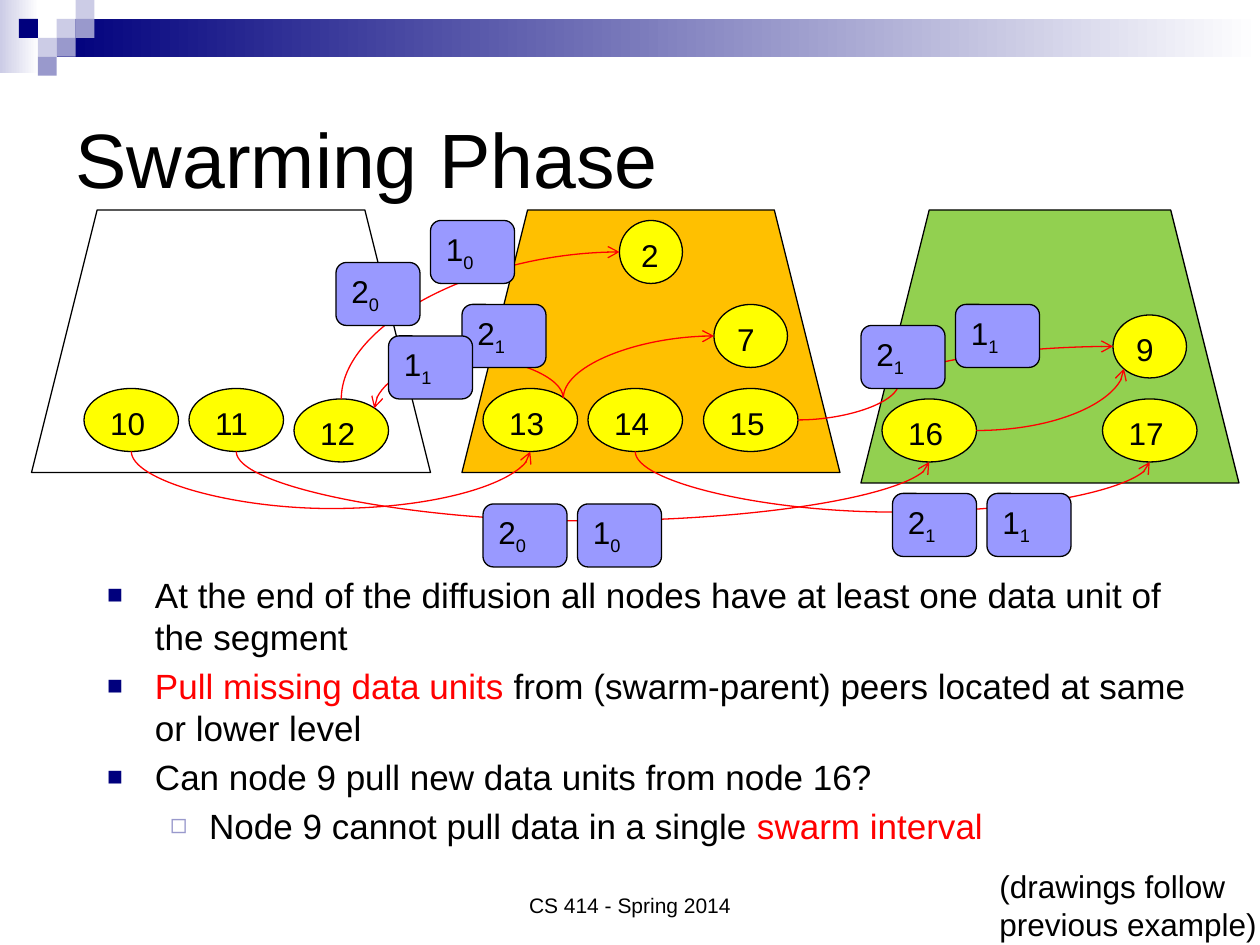
from lxml.etree import SubElement
from pptx import Presentation
from pptx.dml.color import RGBColor
from pptx.enum.shapes import MSO_CONNECTOR, MSO_SHAPE
from pptx.enum.text import MSO_ANCHOR, MSO_AUTO_SIZE, PP_ALIGN
from pptx.oxml.ns import qn
from pptx.util import Inches, Pt

BLACK = RGBColor(0x00, 0x00, 0x00)
WHITE = RGBColor(0xFF, 0xFF, 0xFF)
RED = RGBColor(0xFF, 0x00, 0x00)
YELLOW = RGBColor(0xFF, 0xFF, 0x00)
ORANGE = RGBColor(0xFF, 0xC0, 0x00)
GREEN = RGBColor(0x92, 0xD0, 0x50)
BLOCK = RGBColor(0x99, 0x99, 0xFF)
NAVY = RGBColor(0x00, 0x00, 0x7D)
LILAC = RGBColor(0x99, 0x99, 0xCC)
PALE = RGBColor(0xCC, 0xCC, 0xE6)

prs = Presentation()
prs.slide_width, prs.slide_height = Inches(10), Inches(7.5)
s = prs.slides.add_slide(prs.slide_layouts[1])
U = prs.slide_width // 120  # grid unit: twelve to the inch


def add_box(kind, x, y, w, h, fill, outlined=True):
    sp = s.shapes.add_shape(kind, int(x * U), int(y * U), int(w * U), int(h * U))
    sp.shadow.inherit = False
    sp.fill.solid()
    sp.fill.fore_color.rgb = fill
    if outlined:
        sp.line.color.rgb = BLACK
        sp.line.width = Pt(0.75)
    else:
        sp.line.fill.background()
    sp.text_frame.vertical_anchor = MSO_ANCHOR.TOP
    sp.text_frame.paragraphs[0].alignment = PP_ALIGN.LEFT
    return sp


def add_run(p, text, size, color=BLACK):
    r = p.add_run()
    r.text = text
    r.font.name = "Arial"
    r.font.size = Pt(size)
    r.font.color.rgb = color
    return r


# Header: two fading bars and a mosaic of squares
for x, y, w, h, color in [(0, 0, 3.7, 7, PALE), (5.4, 1.8, 114.6, 3.6, NAVY)]:
    sp = add_box(MSO_SHAPE.RECTANGLE, x, y, w, h, color, outlined=False)
    sp.fill.gradient()
    sp.fill.gradient_angle = 0
    for stop, shade in zip(sp.fill.gradient_stops, (color, WHITE)):
        stop.color.rgb = shade

SQUARE = 1.8
for col, row, color in [(3, 1, PALE), (4, 0, PALE), (4, 1, LILAC), (2, 2, PALE),
                        (1, 1, NAVY), (3, 2, LILAC), (2, 3, LILAC)]:
    add_box(MSO_SHAPE.RECTANGLE, col * SQUARE, row * SQUARE, SQUARE, SQUARE,
            color, outlined=False)

# Title and list
title, body = s.shapes.title, s.placeholders[1]
title.left, title.top, title.width, title.height = 6 * U, 6 * U, 108 * U, 18 * U
title.text_frame.auto_size = MSO_AUTO_SIZE.NONE
title.text_frame.vertical_anchor = MSO_ANCHOR.MIDDLE
p = title.text_frame.paragraphs[0]
p.alignment = PP_ALIGN.LEFT
add_run(p, "Swarming Phase", 44)

body.left, body.top, body.width, body.height = 9 * U, 54 * U, 108 * U, 51 * U
tf = body.text_frame
tf.auto_size = MSO_AUTO_SIZE.NONE
BULLETS = [  # character, colour, size, left margin, hanging indent
    ("■", NAVY, "75000", 0.38, 0.38),
    ("◻", LILAC, "80000", 0.81, 0.31),
]
items = [
    (0, [("At the end of the diffusion all nodes have at least one data unit of "
          "the segment", BLACK)]),
    (0, [("Pull missing data units", RED),
         (" from (swarm-parent) peers located at same or lower level", BLACK)]),
    (0, [("Can node 9 pull new data units from node 16?", BLACK)]),
    (1, [("Node 9 cannot pull data in a single ", BLACK), ("swarm interval", RED)]),
]
for i, (level, runs) in enumerate(items):
    p = tf.add_paragraph() if i else tf.paragraphs[0]
    p.level = level
    char, color, size, margin, hang = BULLETS[level]
    pPr = p._p.get_or_add_pPr()
    pPr.set("marL", str(Inches(margin)))
    pPr.set("indent", str(-Inches(hang)))
    SubElement(SubElement(pPr, qn("a:buClr")), qn("a:srgbClr")).set("val", str(color))
    SubElement(pPr, qn("a:buSzPct")).set("val", size)
    SubElement(pPr, qn("a:buFont")).set("typeface", "Arial")
    SubElement(pPr, qn("a:buChar")).set("char", char)
    if i == 0:
        p.space_before = Pt(0)
    for text, run_color in runs:
        add_run(p, text, 20, run_color)

# Footer and remark
for x, w, h, text, size, align, anchor in [
    (41, 38, 6, "CS 414 - Spring 2014", 12, PP_ALIGN.CENTER, MSO_ANCHOR.BOTTOM),
    (94, 30, 8.5, "(drawings follow previous example)", 18, PP_ALIGN.LEFT, MSO_ANCHOR.TOP),
]:
    tf = s.shapes.add_textbox(x * U, 82 * U, w * U, int(h * U)).text_frame
    tf.word_wrap = True
    tf.vertical_anchor = anchor
    tf.paragraphs[0].alignment = align
    add_run(tf.paragraphs[0], text, size)

# Levels of the tree
for x, w, h, color in [(3, 38, 25, WHITE), (44, 36, 25, ORANGE), (82, 36, 26, GREEN)]:
    add_box(MSO_SHAPE.TRAPEZOID, x, 20, w, h, color)

# Peers: number, left, top, width
nodes = {}
for number, x, y, w in [(10, 8, 37, 9), (11, 18, 37, 9), (12, 28, 38, 9),
                        (2, 59, 21, 6), (13, 46, 37, 9), (14, 56, 37, 9),
                        (15, 67, 37, 9), (7, 68, 29, 7), (16, 84, 38, 9),
                        (17, 105, 38, 9), (9, 106, 30, 7)]:
    sp = add_box(MSO_SHAPE.OVAL, x, y, w, 6, YELLOW)
    add_run(sp.text_frame.paragraphs[0], str(number), 18)
    nodes[number] = sp

# Swarm links; each site is a share of the peer's width and height
TOP, BOTTOM, LEFT, RIGHT = (0.5, 0), (0.5, 1), (0, 0.5), (1, 0.5)
UPPER_RIGHT, LOWER_LEFT = (0.85, 0.15), (0.15, 0.85)
links = [  # from, site, to, site, rotation, flips, bend in inches (None: one arc)
    (10, BOTTOM, 13, BOTTOM, 270, "H", 0.4),
    (11, BOTTOM, 16, BOTTOM, 270, "H", 0.55),
    (12, TOP, 2, LEFT, 90, "HV", None),
    (13, UPPER_RIGHT, 12, UPPER_RIGHT, 270, "HV", -0.32),
    (13, UPPER_RIGHT, 7, LEFT, 90, "HV", None),
    (14, BOTTOM, 17, BOTTOM, 270, "H", 0.48),
    (15, RIGHT, 9, LEFT, 0, "V", 0.8),
    (16, RIGHT, 9, LOWER_LEFT, 0, "V", None),
]
for start, site1, end, site2, rotation, flips, bend in links:
    (x1, y1), (x2, y2) = [
        (nodes[n].left + fx * nodes[n].width, nodes[n].top + fy * nodes[n].height)
        for n, (fx, fy) in ((start, site1), (end, site2))]
    w, h = max(abs(x2 - x1), Pt(0.1)), max(abs(y2 - y1), Pt(0.1))
    if rotation:
        w, h = h, w
    left, top = int((x1 + x2 - w) / 2), int((y1 + y2 - h) / 2)
    cxn = s.shapes.add_connector(MSO_CONNECTOR.CURVE, left, top,
                                 int(left + w), int(top + h))
    cxn.line.color.rgb = RED
    cxn.line.width = Pt(0.75)
    spPr = cxn._element.spPr
    xfrm, geom = spPr.find(qn("a:xfrm")), spPr.find(qn("a:prstGeom"))
    xfrm.set("rot", str(rotation * 60000))
    for axis in flips:
        xfrm.set("flip" + axis, "1")
    if bend is None:
        geom.set("prst", "curvedConnector2")
    else:
        gd = SubElement(geom.find(qn("a:avLst")), qn("a:gd"))
        gd.set("name", "adj1")
        gd.set("fmla", f"val {round(Inches(bend) / w * 100000)}")
    SubElement(spPr.find(qn("a:ln")), qn("a:tailEnd")).set("type", "arrow")
    SubElement(spPr, qn("a:effectLst"))

# Data units: segment, stripe, left, top
for segment, stripe, x, y in [(2, 0, 32, 25), (1, 0, 41, 21), (2, 1, 44, 29),
                              (1, 1, 37, 32), (2, 1, 85, 47), (1, 1, 94, 47),
                              (1, 1, 91, 29), (2, 1, 82, 31), (1, 0, 55, 48),
                              (2, 0, 46, 48)]:
    sp = add_box(MSO_SHAPE.ROUNDED_RECTANGLE, x, y, 8, 6, BLOCK)
    p = sp.text_frame.paragraphs[0]
    add_run(p, str(segment), 18)
    r = add_run(p, str(stripe), 18)
    r.font._element.set("baseline", "-25000")

prs.save("out.pptx")
